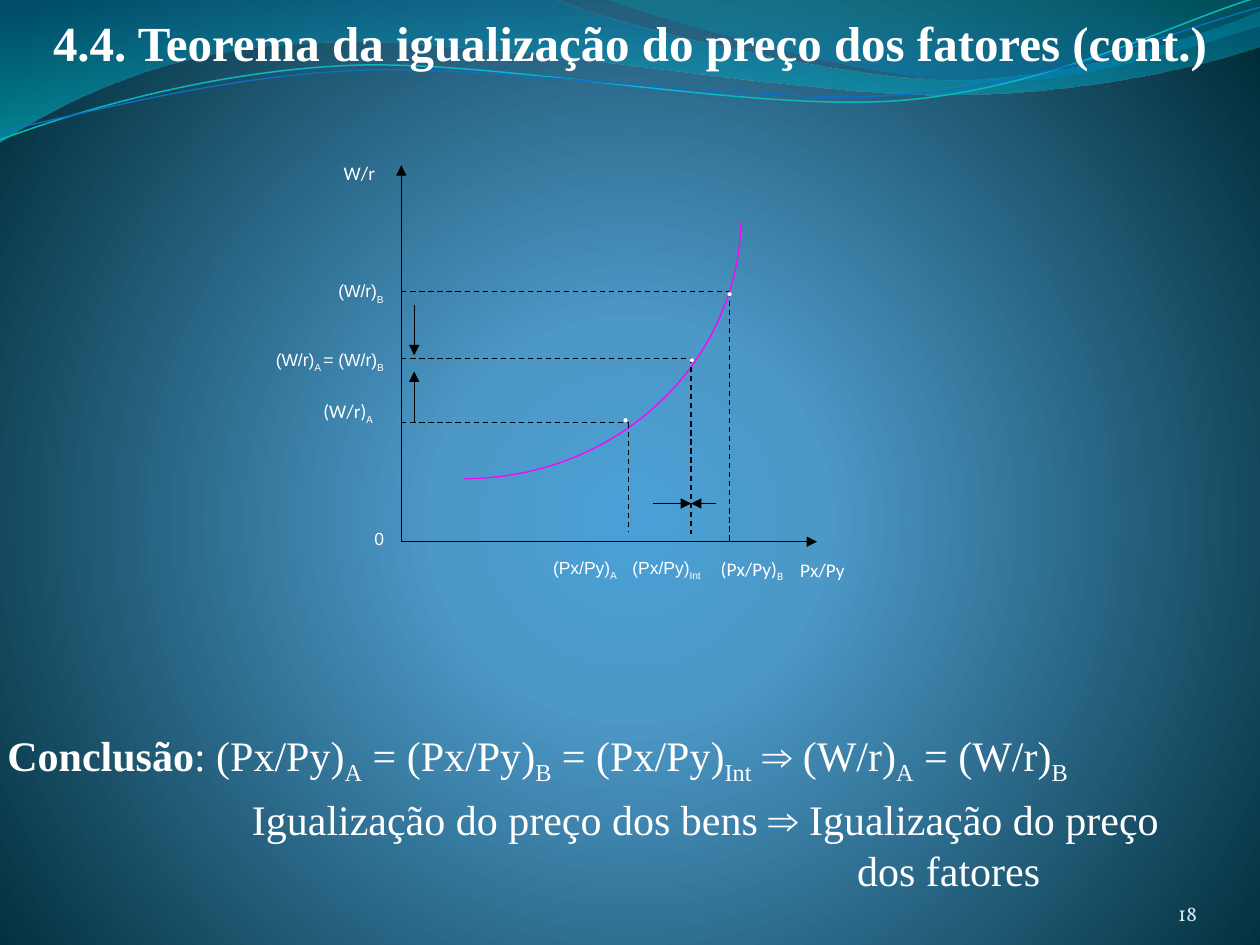
from pptx import Presentation
from pptx import util as u
from pptx import oxml
from pptx.dml.color import RGBColor
from pptx.enum import dml, shapes, text
from pptx.oxml import ns

WHITE = RGBColor(0xFF, 0xFF, 0xFF)
BLACK = RGBColor(0, 0, 0)
MAGENTA = RGBColor(0xFF, 0, 0xFF)
TEAL = RGBColor(0x0A, 0xB8, 0xBF)
BLUE = RGBColor(0x0F, 0x6F, 0xC6)
PALE = RGBColor(0xD1, 0xEA, 0xEE)

DOWNWARD = '<a:lin ang="5400000" scaled="1"/>'
RADIAL = ('<a:path path="circle"><a:fillToRect l="10000" t="110000" '
          'r="10000" b="100000"/></a:path>')
BACKGROUND = [(0, "4AA0D6", 100), (25, "4C98C7", 100), (100, "002C38", 100)]

WAVES = [
    ([(0, 0), (11.18, -0.03), (12.09, 0.43, 16.87, 1.6, 19.25, 1.6),
      (21.67, 1.6, 24.33, 0.66, 25.4, 0.23), (25.43, 0.91),
      (24.97, 1.12, 22.1, 1.93, 18.95, 1.91), (15.8, 1.91, 9.7, 0.71, 6.53, 0.86),
      (3.28, 0.91, 1.17, 2.11, -0.03, 2.87)],
     [(0, "0074A1", 45), (100, "00C6CF", 55)]),
    ([(12.17, -0.03), (12.93, 0.28, 17.32, 1.57, 19.53, 1.65),
      (21.74, 1.75, 24.41, 0.81, 25.4, 0.53), (25.4, 0)],
     [(0, "00A1A9", 30), (80, "008BBF", 45)]),
]
CURVES = [
    ([(0, 2.82), (1.22, 2.36, 4.01, 1.45, 7.04, 1.32),
      (10.03, 1.19, 15.06, 2.26, 18.11, 2.03),
      (21.16, 1.8, 23.83, 0.38, 25.35, -0.05)], TEAL, 0.85),
    ([(0, 2.64), (1.19, 2.44, 4.17, 1.55, 7.19, 1.42),
      (10.24, 1.3, 15.16, 2.13, 18.21, 1.91),
      (21.23, 1.7, 23.9, 0.53, 25.4, 0.15)], BLUE, 0.75),
    ([(9.36, 9.65), (12.4, 9.65, 14.86, 7.37, 14.94, 4.47)], MAGENTA, 0.75),
]

ORIGIN_X, ORIGIN_Y = 8.09, 10.92
ARROWS = [
    (ORIGIN_X, ORIGIN_Y, ORIGIN_X, 3.33), (ORIGIN_X, ORIGIN_Y, 16.47, ORIGIN_Y),
    (13.17, 10.15, 13.93, 10.15), (14.44, 10.15, 13.93, 10.15),
    (8.35, 8.5, 8.35, 7.49), (8.35, 6.15, 8.35, 7.16),
]
GUIDES = [(14.7, 5.88, 10.97), (13.93, 7.22, 10.77), (12.67, 8.52, 10.72)]
DOTS = [(14.2, 5.59), (13.44, 6.91), (12.1, 8.13)]

ARIAL = {"name": "Arial", "size": u.Pt(10)}
CALIBRI = {"name": "Calibri", "size": u.Pt(11)}
DOT = {"name": "Times New Roman", "size": u.Pt(10)}
SERIF = {"name": "Times New Roman", "size": u.Pt(24)}
HEADING = {"name": "Times New Roman", "size": u.Pt(28), "bold": True}
NUMBER = {"name": "Vollkorn", "size": u.Pt(12)}

LABELS = [
    ("(Px/Py)|Int", 12.5, 11.1, 2.03, ARIAL, -30),
    ("0", 7.3, 10.52, 2.03, ARIAL, -30),
    ("(W/r)|B", 6.57, 5.53, 2.03, ARIAL, -30),
    ("(W/r)|A |= (W/r)|B", 5.31, 6.91, 2.79, ARIAL, -30),
    ("(Px/Py)|A", 10.9, 11.1, 2.03, ARIAL, -30),
    ("(Px/Py)|B", 14.28, 11.1, 2.03, CALIBRI, -25),
    ("Px/Py", 15.88, 11.13, 2.03, CALIBRI, -25),
    ("(W/r)|A", 6.27, 7.92, 2.03, CALIBRI, -25),
    ("W/r", 6.68, 3.12, 2.03, CALIBRI, -25),
]
TITLE = "4.4. Teorema da igualização do preço dos fatores (cont.)"
CONCLUSION = [
    (": (Px/Py)|A| = (Px/Py)|B| = (Px/Py)|Int| ⇒ (W/r)|A| = (W/r)|B", 0, 0),
    ("Igualização do preço dos bens ⇒ Igualização do preço", 4.93, 4),
    ("dos fatores", 17.13, 0.5),
]


def add_span(para, words, font, color=WHITE, baseline=0):
    span = para.add_run()
    span.text = words
    for key, value in font.items():
        setattr(span.font, key, value)
    span.font.color.rgb = color
    if baseline:
        span.font._element.set("baseline", str(baseline * 1000))


def add_marked(para, marked, font, drop=-25):
    for index, words in enumerate(marked.split("|")):
        add_span(para, words, font, baseline=drop * (index % 2))


def add_box(page, left, top, width, height):
    box = page.shapes.add_textbox(u.Cm(left), u.Cm(top), u.Cm(width), u.Cm(height))
    box.text_frame.word_wrap = True
    return box.text_frame


def indent(para, distance):
    para._p.get_or_add_pPr().set("marL", str(u.Cm(distance)))


def set_gradient(solid, stops, direction):
    marks = "".join(
        f'<a:gs pos="{pos * 1000}"><a:srgbClr val="{color}">'
        f'<a:alpha val="{alpha * 1000}"/></a:srgbClr></a:gs>'
        for pos, color, alpha in stops)
    gradient = oxml.parse_xml(
        f'<a:gradFill {ns.nsdecls("a")} rotWithShape="1"><a:gsLst>{marks}</a:gsLst>'
        f'{direction}</a:gradFill>')
    solid.getparent().replace(solid, gradient)


def add_outline(page, path, close):
    points = [(u.Cm(part[i]), u.Cm(part[i + 1]))
              for part in path for i in range(0, len(part), 2)]
    builder = page.shapes.build_freeform(*points[0])
    builder.add_line_segments(points[1:], close=close)
    outline = builder.convert_to_shape()
    outline.shadow.inherit = False
    segments = iter(outline._element.xpath(".//a:lnTo"))
    for part in path[1:]:
        first = next(segments)
        if len(part) == 6:
            bend = oxml.parse_xml(f'<a:cubicBezTo {ns.nsdecls("a")}/>')
            first.addprevious(bend)
            for segment in (first, next(segments), next(segments)):
                bend.append(segment[0])
                segment.getparent().remove(segment)
    return outline


def add_line(page, x1, y1, x2, y2, arrow=False):
    line = page.shapes.add_connector(
        shapes.MSO_CONNECTOR.STRAIGHT, u.Cm(x1), u.Cm(y1), u.Cm(x2), u.Cm(y2))
    line.line.color.rgb = BLACK
    line.line.width = u.Pt(0.75)
    if arrow:
        line.line._get_or_add_ln().append(
            oxml.parse_xml(f'<a:tailEnd {ns.nsdecls("a")} type="triangle"/>'))
    else:
        line.line.dash_style = dml.MSO_LINE.DASH
    line._element.spPr.append(oxml.parse_xml(f'<a:effectLst {ns.nsdecls("a")}/>'))


def main():
    deck = Presentation()
    deck.slide_width, deck.slide_height = u.Cm(25.4), u.Cm(19.05)
    page = deck.slides.add_slide(deck.slide_layouts[5])
    page.background.fill.solid()
    set_gradient(page.element.xpath("./p:cSld/p:bg/p:bgPr/a:solidFill")[0],
                 BACKGROUND, RADIAL)

    for path, stops in WAVES:
        wave = add_outline(page, path, True)
        wave.line.fill.background()
        wave.fill.solid()
        set_gradient(wave._element.xpath("./p:spPr/a:solidFill")[0], stops, DOWNWARD)
    for path, color, width in CURVES:
        curve = add_outline(page, path, False)
        curve.fill.background()
        curve.line.color.rgb = color
        curve.line.width = u.Pt(width)

    title = page.shapes.title
    title.left, title.top, title.width, title.height = map(u.Cm, (0, 0.13, 25.4, 1.45))
    frame = title.text_frame
    frame.auto_size = text.MSO_AUTO_SIZE.NONE
    frame.vertical_anchor = text.MSO_ANCHOR.TOP
    frame.paragraphs[0].alignment = text.PP_ALIGN.CENTER
    add_span(frame.paragraphs[0], TITLE, HEADING)
    page.shapes._spTree.append(title._element)

    for arrow in ARROWS:
        add_line(page, *arrow, arrow=True)
    for x, y, foot in GUIDES:
        add_line(page, ORIGIN_X, y, x, y)
        add_line(page, x, y, x, foot)
    for marked, left, top, width, font, drop in LABELS:
        add_marked(add_box(page, left, top, width, 1.02).paragraphs[0], marked, font, drop)
    for left, top in DOTS:
        para = add_box(page, left, top, 2.03, 1.02).paragraphs[0]
        indent(para, 0.2)
        add_span(para, "•", DOT)

    frame = add_box(page, -0.1, 14.66, 25.4, 4.7)
    frame.vertical_anchor = text.MSO_ANCHOR.MIDDLE
    frame.margin_bottom = u.Cm(1.4)
    add_span(frame.paragraphs[0], "Conclusão", {**SERIF, "bold": True})
    for index, (marked, distance, before) in enumerate(CONCLUSION):
        para = frame.add_paragraph() if index else frame.paragraphs[0]
        indent(para, distance)
        para.space_before = u.Pt(before)
        add_marked(para, marked, SERIF)

    frame = add_box(page, 22.02, 17.65, 2.11, 1.02)
    for side in ("left", "top", "right", "bottom"):
        setattr(frame, f"margin_{side}", 0)
    frame.vertical_anchor = text.MSO_ANCHOR.BOTTOM
    frame.paragraphs[0].alignment = text.PP_ALIGN.RIGHT
    add_span(frame.paragraphs[0], "18", NUMBER, PALE)

    deck.save("out.pptx")


if __name__ == "__main__":
    main()
